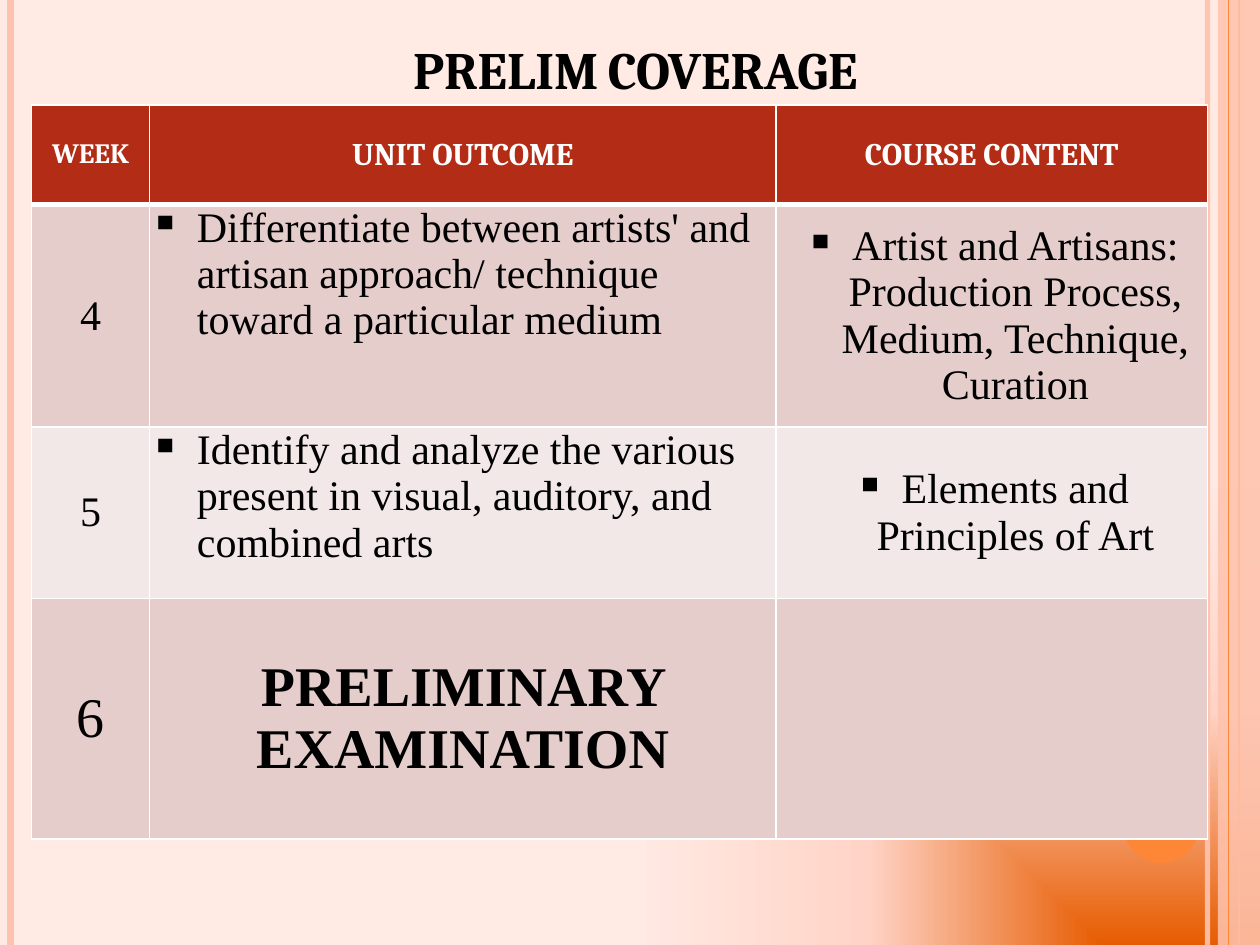
from dataclasses import dataclass

from lxml.etree import SubElement
from pptx import Presentation
from pptx.dml.color import RGBColor
from pptx.enum.shapes import MSO_CONNECTOR, MSO_SHAPE
from pptx.enum.text import MSO_ANCHOR as Anchor, PP_ALIGN as Align
from pptx.oxml import parse_xml
from pptx.oxml.ns import nsdecls, qn
from pptx.util import Pt

HEADING_FONT = "Cambria"
BODY_FONT = "Times New Roman"
HEADER_FILL, DARK_BAND, LIGHT_BAND = "B32C16", "E5CDCC", "F2E8E8"


@dataclass
class Stripe:
    x: float
    width: float
    color: str
    opacity: int = 100


@dataclass
class Entry:
    text: str
    size: float = 24
    font: str = BODY_FONT
    color: str = "000000"
    bold: bool = False
    bullet: bool = False
    align: Align = Align.CENTER
    anchor: Anchor = Anchor.MIDDLE


@dataclass
class Row:
    height: float
    fill: str
    entries: list[Entry]


def rgb(value: str) -> RGBColor:
    return RGBColor.from_string(value)


def set_opacity(shape, percent: int) -> None:
    if percent < 100:
        color = next(shape._element.spPr.iter(qn("a:srgbClr")))
        SubElement(color, qn("a:alpha"), val=str(percent * 1000))


def set_background(slide, stops: list[tuple[int, str]]) -> None:
    fill = slide.background.fill
    fill.solid()
    properties = slide._element.cSld.find(qn("p:bg")).find(qn("p:bgPr"))
    solid = properties.find(qn("a:solidFill"))
    gradient_stops = "".join(
        f'<a:gs pos="{position * 1000}"><a:srgbClr val="{color}"/></a:gs>'
        for position, color in stops
    )
    gradient = parse_xml(
        f'<a:gradFill {nsdecls("a")} rotWithShape="1"><a:gsLst>{gradient_stops}</a:gsLst>'
        '<a:path path="rect"><a:fillToRect l="100000" t="100000"/></a:path></a:gradFill>'
    )
    properties.replace(solid, gradient)


def add_stripe(slide, stripe: Stripe) -> None:
    line = slide.shapes.add_connector(
        MSO_CONNECTOR.STRAIGHT, Pt(stripe.x), Pt(0), Pt(stripe.x), Pt(540)
    )
    line.line.width = Pt(stripe.width)
    line.line.color.rgb = rgb(stripe.color)
    set_opacity(line, stripe.opacity)
    SubElement(line._element.spPr, qn("a:effectLst"))


def add_plain_shape(slide, kind, left: float, top: float, width: float, height: float,
                    color: str, opacity: int = 100) -> None:
    shape = slide.shapes.add_shape(kind, Pt(left), Pt(top), Pt(width), Pt(height))
    shape.shadow.inherit = False
    shape.fill.solid()
    shape.fill.fore_color.rgb = rgb(color)
    shape.line.fill.background()
    set_opacity(shape, opacity)


def format_run(run, entry: Entry) -> None:
    run.font.name = entry.font
    run.font.size = Pt(entry.size)
    run.font.bold = entry.bold
    run.font.color.rgb = rgb(entry.color)


def set_borders(cell, top: float, bottom: float) -> None:
    properties = cell._tc.get_or_add_tcPr()
    for side, width in (("L", 1), ("R", 1), ("T", top), ("B", bottom)):
        properties.append(parse_xml(
            f'<a:ln{side} {nsdecls("a")} w="{Pt(width)}"><a:solidFill>'
            f'<a:srgbClr val="FFFFFF"/></a:solidFill></a:ln{side}>'
        ))


def add_bullet(paragraph) -> None:
    properties = paragraph._p.get_or_add_pPr()
    properties.set("marL", str(Pt(27)))
    properties.set("indent", str(-Pt(27)))
    SubElement(properties, qn("a:buChar"), char="▪")


def fill_cell(cell, entry: Entry, is_header: bool) -> None:
    cell.vertical_anchor = entry.anchor
    if not is_header:
        cell.margin_left = cell.margin_right = cell.margin_top = cell.margin_bottom = 0
    if not entry.text:
        return
    paragraph = cell.text_frame.paragraphs[0]
    paragraph.text = entry.text
    paragraph.alignment = entry.align
    format_run(paragraph.runs[0], entry)
    if entry.bullet:
        add_bullet(paragraph)


def add_coverage_table(slide, left: float, top: float, widths: list[float],
                       rows: list[Row]) -> None:
    height = sum(row.height for row in rows)
    table = slide.shapes.add_table(
        len(rows), len(widths), Pt(left), Pt(top), Pt(sum(widths)), Pt(height)
    ).table
    table.horz_banding = False
    for column, width in zip(table.columns, widths):
        column.width = Pt(width)
    for index, row in enumerate(rows):
        table.rows[index].height = Pt(row.height)
        for cell, entry in zip(table.rows[index].cells, row.entries):
            set_borders(cell, 3 if index == 1 else 1, 3 if index == 0 else 1)
            cell.fill.solid()
            cell.fill.fore_color.rgb = rgb(row.fill)
            fill_cell(cell, entry, index == 0)


def heading(text: str, size: float) -> Entry:
    return Entry(text, size, HEADING_FONT, "FFFFFF", True)


def outcome(text: str) -> Entry:
    return Entry(text, bullet=True, align=Align.LEFT, anchor=Anchor.TOP)


def content(text: str) -> Entry:
    return Entry(text, bullet=True)


def add_title(slide, entry: Entry) -> None:
    title = slide.shapes.title
    title.left, title.top, title.width, title.height = Pt(36), Pt(12), Pt(654), Pt(54)
    title.text_frame.text = entry.text
    title.text_frame.vertical_anchor = entry.anchor
    paragraph = title.text_frame.paragraphs[0]
    paragraph.alignment = entry.align
    format_run(paragraph.runs[0], entry)
    paragraph.runs[0].font._element.set("cap", "small")


ROWS = [
    Row(57, HEADER_FILL, [
        heading("WEEK", 16), heading("UNIT OUTCOME", 18), heading("COURSE CONTENT", 18)]),
    Row(127, DARK_BAND, [
        Entry("4"),
        outcome("Differentiate between artists' and artisan approach/ technique "
                "toward a particular medium"),
        content("Artist and Artisans: Production Process, Medium, Technique, Curation")]),
    Row(98, LIGHT_BAND, [
        Entry("5"),
        outcome("Identify and analyze the various present in visual, auditory, "
                "and combined arts"),
        content("Elements and Principles of Art")]),
    Row(137.5, DARK_BAND, [
        Entry("6", 32), Entry("PRELIMINARY EXAMINATION", 32, bold=True), Entry("")]),
]


def main() -> None:
    presentation = Presentation()
    presentation.slide_width, presentation.slide_height = Pt(720), Pt(540)
    slide = presentation.slides.add_slide(presentation.slide_layouts[5])
    set_background(slide, [(0, "E75C01"), (50, "FFD4C7"), (100, "FFEAE4")])
    for stripe in (Stripe(690, 3, "FEC3AE", 93), Stripe(6, 4.5, "FEC3AE"),
                   Stripe(708, 1.5, "FE8637")):
        add_stripe(slide, stripe)
    add_plain_shape(slide, MSO_SHAPE.RECTANGLE, 696, 0, 24, 540, "FEC3AE", 87)
    add_stripe(slide, Stripe(702, 0.75, "FE8637"))
    add_plain_shape(slide, MSO_SHAPE.OVAL, 642, 450, 43.2, 43.2, "FE8637")
    add_title(slide, Entry("PRELIM COVERAGE", 30, HEADING_FONT, bold=True))
    add_coverage_table(slide, 18, 60, [67.5, 358, 246.5], ROWS)
    presentation.save("out.pptx")


if __name__ == "__main__":
    main()
